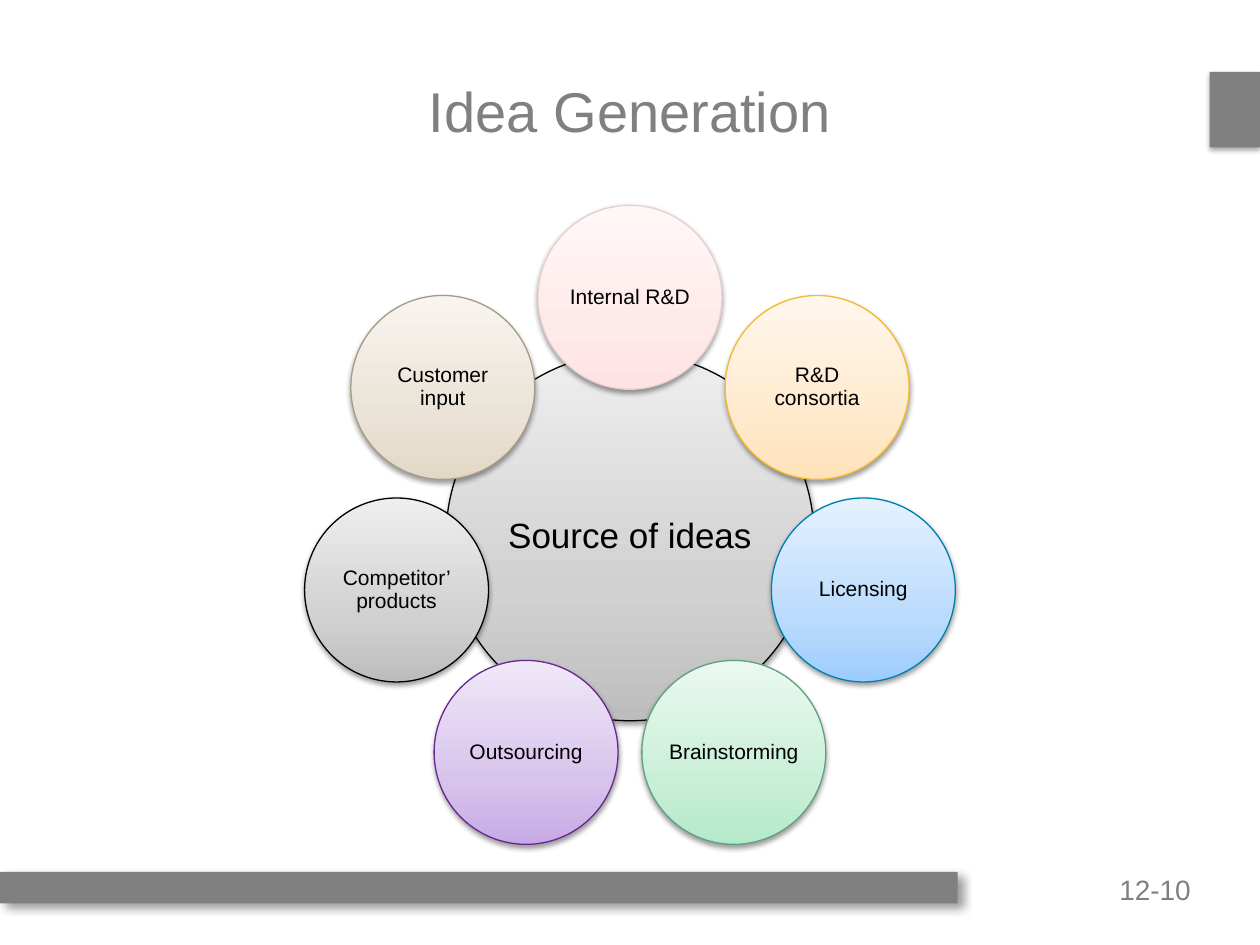
"""Build the Idea Generation slide: sources of ideas around a hub."""
from copy import deepcopy
from math import cos, pi, sin

from pptx import Presentation
from pptx.dml.color import RGBColor
from pptx.enum.shapes import MSO_SHAPE
from pptx.enum.text import MSO_ANCHOR, PP_ALIGN
from pptx.oxml import parse_xml
from pptx.oxml.ns import nsdecls, qn
from pptx.util import Inches, Pt

INK = {"gray": "808080", "black": "000000", "white": "FFFFFF"}
TONES = {
    "gray": ("000000", "BDBDBD", "D1D1D1", "EEEEEE"),
    "pink": ("E8D0D0", "FFE2E2", "FFEAEA", "FFF7F7"),
    "orange": ("F3BA2B", "FFE2B9", "FFEACE", "FFF7EC"),
    "blue": ("007FAF", "9CCDFD", "BBDBFC", "E4F1FF"),
    "green": ("5FA17D", "B4E9C9", "CAEFD8", "EAF9F0"),
    "purple": ("692590", "C7AAE5", "D7C4EC", "F0E8F8"),
    "tan": ("A69B88", "E3D8C6", "EBE3D7", "F8F4EF"),
}
TITLE = "Idea Generation"
PAGE = "12-10"
HUB = "Source of ideas"
IDEAS = [
    ("Internal R&D", "pink"),
    ("R&D consortia", "orange"),
    ("Licensing", "blue"),
    ("Brainstorming", "green"),
    ("Outsourcing", "purple"),
    ("Competitor’ products", "gray"),
    ("Customer input", "tan"),
]
BARS = [
    ((9.6, 0.57, 0.4, 0.6), (35, 3.1, 1.8, 90)),
    ((0, 6.92, 7.6, 0.25), (38, 5, 4, 45)),
]
MID_X, MID_Y, RING = 5, 4.26, 1.9
STOPS = (0, 0.35, 1)


def rgb(name):
    return RGBColor.from_string(name)


def write(frame, text, size, color, align, inset=None, space=None):
    frame.word_wrap = True
    frame.vertical_anchor = MSO_ANCHOR.MIDDLE
    if inset is not None:
        frame.margin_left = frame.margin_right = Inches(inset)
        frame.margin_top = frame.margin_bottom = Inches(inset)
    para = frame.paragraphs[0]
    para.alignment = align
    para.line_spacing = space
    run = para.add_run()
    run.text = text
    run.font.size = Pt(size)
    run.font.name = "Arial"
    run.font.color.rgb = rgb(color)


def shade(shape, alpha, blur, dist, angle):
    shape.shadow.inherit = False
    effects = shape._element.spPr.find(qn("a:effectLst"))
    effects.append(parse_xml(
        f'<a:outerShdw {nsdecls("a")} blurRad="{Pt(blur)}" dist="{Pt(dist)}" '
        f'dir="{angle * 60000}" rotWithShape="0"><a:srgbClr val="{INK["black"]}">'
        f'<a:alpha val="{alpha * 1000}"/></a:srgbClr></a:outerShdw>'))


def add_bar(slide, box, shadow):
    bar = slide.shapes.add_shape(MSO_SHAPE.RECTANGLE, *map(Inches, box))
    bar.fill.solid()
    bar.fill.fore_color.rgb = rgb(INK["gray"])
    bar.line.fill.background()
    shade(bar, *shadow)


def add_disc(slide, x, y, width, text, tone, size, inset):
    edge, *blend = TONES[tone]
    box = (x - width / 2, y - width / 2, width, width)
    disc = slide.shapes.add_shape(MSO_SHAPE.OVAL, *map(Inches, box))
    disc.fill.gradient()
    disc.fill.gradient_angle = 90
    stops = disc._element.spPr.find(".//" + qn("a:gsLst"))
    stops.append(deepcopy(stops[0]))
    for stop, place, color in zip(disc.fill.gradient_stops, STOPS, blend):
        stop.position = place
        stop.color.rgb = rgb(color)
    disc.line.color.rgb = rgb(edge)
    disc.line.width = Pt(0.75)
    shade(disc, 38, 3.1, 1.6, 90)
    write(disc.text_frame, text, size, INK["black"], PP_ALIGN.CENTER, inset, 0.9)


def main():
    deck = Presentation()
    deck.slide_width, deck.slide_height = Inches(10), Inches(7.5)
    slide = deck.slides.add_slide(deck.slide_layouts[5])
    slide.background.fill.solid()
    slide.background.fill.fore_color.rgb = rgb(INK["white"])

    title = slide.shapes.title
    title.left, title.top = Inches(0.6), Inches(0.25)
    title.width, title.height = Inches(8.8), Inches(1.25)
    write(title.text_frame, TITLE, 32, INK["gray"], PP_ALIGN.CENTER)

    page = slide.shapes.add_textbox(*map(Inches, (7.5, 6.92, 1.95, 0.25)))
    write(page.text_frame, PAGE, 16, INK["gray"], PP_ALIGN.RIGHT, 0, 1.02)
    page.text_frame.vertical_anchor = MSO_ANCHOR.TOP

    for box, shadow in BARS:
        add_bar(slide, box, shadow)

    add_disc(slide, MID_X, MID_Y, 2.92, HUB, "gray", 20, 0.03)
    for i, (text, tone) in enumerate(IDEAS):
        turn = 2 * pi * i / len(IDEAS)
        x, y = MID_X + RING * sin(turn), MID_Y - RING * cos(turn)
        add_disc(slide, x, y, 1.46, text, tone, 12, 0)

    deck.save("out.pptx")


if __name__ == "__main__":
    main()
